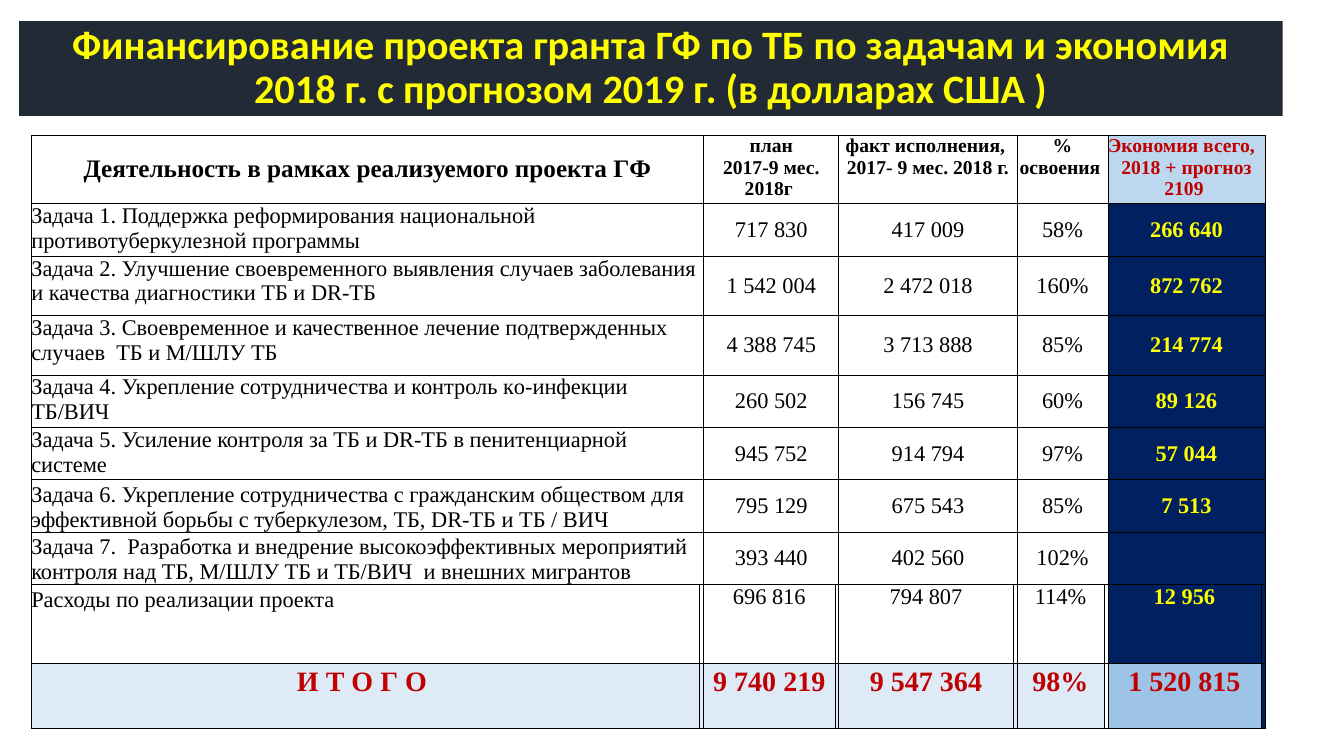
from lxml import etree
from pptx import Presentation
from pptx import util as u
from pptx.dml.color import RGBColor
from pptx.enum import text
from pptx.oxml import ns

COLORS = {"black": "000000", "white": "FFFFFF", "slate": "222A35", "yellow": "FFFF00",
          "red": "C00000", "navy": "002060", "header": "BDD7EE", "total": "DEEBF7",
          "total_saving": "9DC3E6"}
CENTER, LEFT = text.PP_ALIGN.CENTER, text.PP_ALIGN.LEFT
TOP, MIDDLE, BOTTOM = text.MSO_ANCHOR.TOP, text.MSO_ANCHOR.MIDDLE, text.MSO_ANCHOR.BOTTOM

TITLE = ("Финансирование проекта гранта ГФ по ТБ по задачам и экономия "
         "2018 г. с прогнозом 2019 г. (в долларах США )")
HEADERS = ["Деятельность в рамках реализуемого проекта ГФ",
           "план\n2017-9 мес. 2018г ",
           "факт исполнения, \n2017- 9 мес. 2018 г.",
           "% освоения ",
           "Экономия всего,  \n2018 + прогноз 2109 "]
TASKS = [
    ("Задача 1. Поддержка реформирования национальной противотуберкулезной программы",
     "717 830", "417 009", "58%", "266 640"),
    ("Задача 2. Улучшение своевременного выявления случаев заболевания и качества "
     "диагностики ТБ и DR-TБ", "1 542 004", "2 472 018", "160%", "872 762"),
    ("Задача 3. Своевременное и качественное лечение подтвержденных случаев  ТБ и М/ШЛУ ТБ",
     "4 388 745", "3 713 888", "85%", "214 774"),
    ("Задача 4. Укрепление сотрудничества и контроль кo-инфекции TБ/ВИЧ",
     "260 502", "156 745", "60%", "89 126"),
    ("Задача 5. Усиление контроля за TБ и DR-TБ в пенитенциарной системе",
     "945 752", "914 794", "97%", "57 044"),
    ("Задача 6. Укрепление сотрудничества с гражданским обществом для эффективной "
     "борьбы с туберкулезом, ТБ, DR-TБ и ТБ / ВИЧ", "795 129", "675 543", "85%", "7 513"),
    ("Задача 7.  Разработка и внедрение высокоэффективных мероприятий контроля над ТБ, "
     "М/ШЛУ ТБ и ТБ/ВИЧ  и внешних мигрантов", "393 440", "402 560", "102%", ""),
]
COSTS = ("Расходы по реализации проекта", "696 816", "794 807", "114%", "12 956")
TOTAL = ("И Т О Г О ", "9 740 219", "9 547 364", "98%", "1 520 815")

# Each visible column is followed by a thin one, in inches like the rows
GAP = 0.03
COLUMNS = [width for wide in (6.63, 1.3, 1.73, 0.86, 1.52) for width in (wide, GAP)]
ROWS = [0.68, 0.52, 0.59, 0.59, 0.52, 0.52, 0.52, 0.52, 0.78, 0.65]


def write(frame, content, font="Times New Roman", size=16, color="black", bold=False,
          align=CENTER, spacing=None):
    """Fill a text frame, one paragraph for each line of content."""
    frame.text = content
    for paragraph in frame.paragraphs:
        paragraph.alignment = align
        paragraph.line_spacing = spacing
        for target in [paragraph, *paragraph.runs]:
            target.font.name = font
            target.font.size = u.Pt(size)
            target.font.bold = bold
            target.font.color.rgb = RGBColor.from_string(COLORS[color])


def paint(fill, color):
    fill.solid()
    fill.fore_color.rgb = RGBColor.from_string(COLORS[color])


def outline(cell):
    properties = cell._tc.get_or_add_tcPr()
    for side in ("lnL", "lnR", "lnT", "lnB"):
        line = etree.SubElement(properties, ns.qn(f"a:{side}"), w=str(u.Pt(0.5)))
        solid = etree.SubElement(line, ns.qn("a:solidFill"))
        etree.SubElement(solid, ns.qn("a:srgbClr"), val=COLORS["black"])


class Deck:
    def __init__(self):
        self.presentation = Presentation()
        self.presentation.slide_width = u.Inches(13.33)
        self.presentation.slide_height = u.Inches(7.5)
        self.slide = self.presentation.slides.add_slide(self.presentation.slide_layouts[5])

    def area(self, left, top, width, height):
        """Turn percentages of the slide into lengths."""
        wide, high = self.presentation.slide_width, self.presentation.slide_height
        return [int(share * full / 100) for share, full in
                zip((left, top, width, height), (wide, high, wide, high))]

    def title(self, content, area, fill, **style):
        shape = self.slide.shapes.title
        shape.left, shape.top, shape.width, shape.height = self.area(*area)
        paint(shape.fill, fill)
        frame = shape.text_frame
        frame.word_wrap = True
        frame.auto_size = text.MSO_AUTO_SIZE.NONE
        frame.vertical_anchor = MIDDLE
        write(frame, content, **style)

    def table(self, area, columns, rows):
        shape = self.slide.shapes.add_table(len(rows), len(columns), *self.area(*area))
        table = shape.table
        for column, width in zip(table.columns, columns):
            column.width = u.Inches(width)
        for row, height in zip(table.rows, rows):
            row.height = u.Inches(height)
        return table

    def cell(self, cell, content="", fill="white", anchor=MIDDLE, top=0, **style):
        cell.margin_left = cell.margin_right = cell.margin_bottom = 0
        cell.margin_top = u.Inches(top)
        cell.vertical_anchor = anchor
        outline(cell)
        paint(cell.fill, fill)
        write(cell.text_frame, content, **style)


def task_anchor(row):
    return BOTTOM if row > 5 else TOP


def main():
    deck = Deck()
    deck.title(TITLE, (1.43, 2.8, 94, 12.53), "slate", font="Calibri", size=28.8,
               color="yellow", bold=True, spacing=0.9)
    table = deck.table((2.33, 17.87, 91.4, 78.4), COLUMNS, ROWS)
    costs_row, total_row = len(ROWS) - 2, len(ROWS) - 1

    for row, record in enumerate([HEADERS, *TASKS, COSTS, TOTAL]):
        for column, content in enumerate(record):
            first, saving = column == 0, column == len(record) - 1
            wide, thin = table.cell(row, 2 * column), table.cell(row, 2 * column + 1)
            style = {"color": "yellow" if saving else "black", "bold": saving,
                     "fill": "navy" if saving else "white",
                     "align": LEFT if first else CENTER}
            thin_fill = style["fill"]
            if row == 0:
                style = {"size": 18 if first else 14, "bold": True,
                         "anchor": MIDDLE if first else TOP,
                         "color": "red" if saving else "black",
                         "fill": "header" if saving else "white"}
            elif row == total_row:
                style = {"size": 20, "bold": True, "color": "red", "anchor": TOP, "top": GAP,
                         "fill": "total_saving" if saving else "total"}
                thin_fill = "total" if column < 3 else thin_fill
            elif row == costs_row:
                style.update(anchor=TOP, top=GAP if first else 0)
            elif first:
                style["anchor"] = task_anchor(row)

            deck.cell(thin, fill=thin_fill, size=8)
            deck.cell(wide, content, **style)
            if row < costs_row:
                wide.merge(thin)

    deck.presentation.save("out.pptx")


if __name__ == "__main__":
    main()
